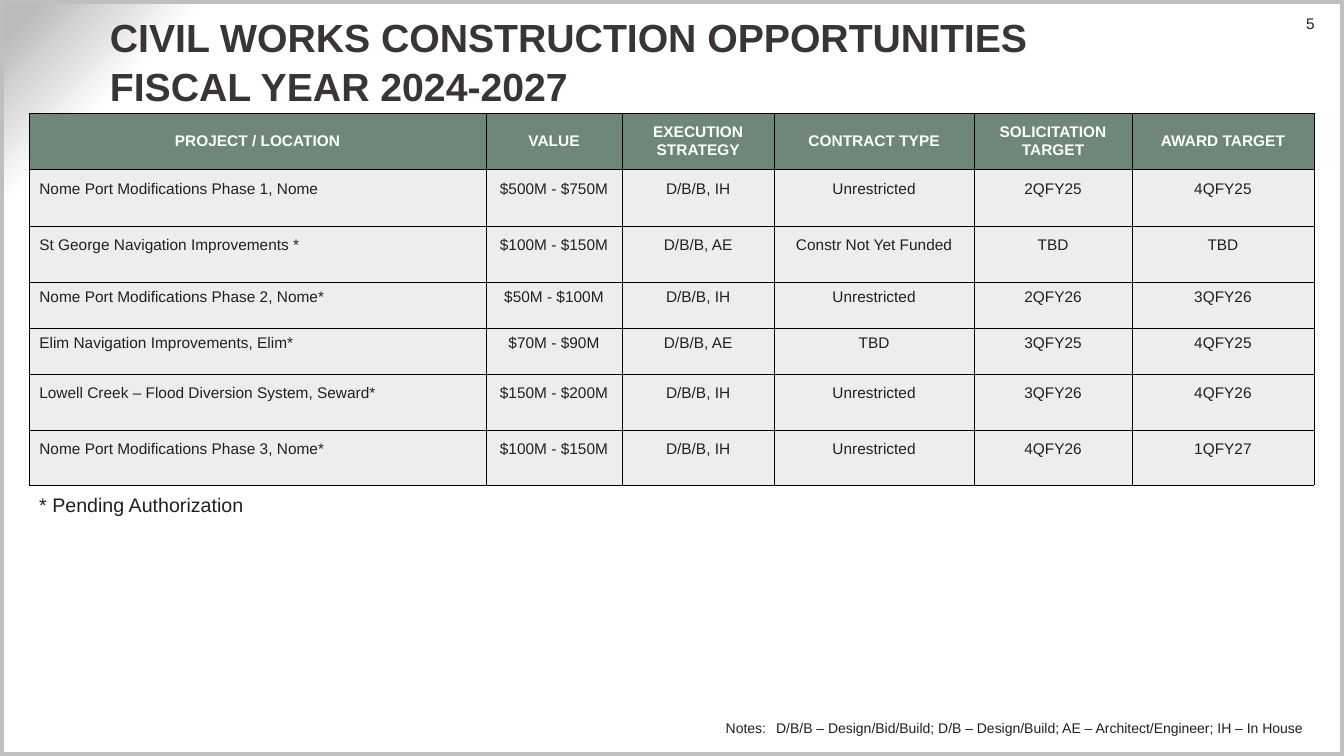
"""Build the civil works construction opportunities slide."""
from pptx import Presentation
from pptx.dml.color import RGBColor
from pptx.enum.shapes import MSO_SHAPE
from pptx.enum.text import MSO_ANCHOR, MSO_AUTO_SIZE, PP_ALIGN
from pptx.oxml import parse_xml
from pptx.oxml.ns import nsdecls
from pptx.util import Inches, Pt

INK = "221F20"
COLUMN_WIDTHS = (4.53, 1.35, 1.51, 1.98, 1.57, 1.8)
ROW_HEIGHTS = (0.56, 0.56, 0.56, 0.46, 0.45, 0.55, 0.55)
PROJECTS = (
    ("PROJECT / LOCATION", "VALUE", "EXECUTION STRATEGY", "CONTRACT TYPE",
     "SOLICITATION TARGET", "AWARD TARGET"),
    ("Nome Port Modifications Phase 1, Nome", "$500M - $750M", "D/B/B, IH",
     "Unrestricted", "2QFY25", "4QFY25"),
    ("St George Navigation Improvements *", "$100M - $150M", "D/B/B, AE",
     "Constr Not Yet Funded", "TBD", "TBD"),
    ("Nome Port Modifications Phase 2, Nome*", "$50M - $100M", "D/B/B, IH",
     "Unrestricted", "2QFY26", "3QFY26"),
    ("Elim Navigation Improvements, Elim*", "$70M - $90M", "D/B/B, AE",
     "TBD", "3QFY25", "4QFY25"),
    ("Lowell Creek – Flood Diversion System, Seward*", "$150M - $200M", "D/B/B, IH",
     "Unrestricted", "3QFY26", "4QFY26"),
    ("Nome Port Modifications Phase 3, Nome*", "$100M - $150M", "D/B/B, IH",
     "Unrestricted", "4QFY26", "1QFY27"),
)


def color(hex_text):
    return RGBColor.from_string(hex_text)


def add_span(para, text, size, ink=INK, bold=False):
    span = para.add_run()
    span.text = text
    span.font.name = "Arial"
    span.font.size = Pt(size)
    span.font.bold = bold
    span.font.color.rgb = color(ink)


def set_margins(target, left, top, right, bottom):
    target.margin_left, target.margin_top = Inches(left), Inches(top)
    target.margin_right, target.margin_bottom = Inches(right), Inches(bottom)


def place(shape, left, top, width, height):
    shape.left, shape.top = Inches(left), Inches(top)
    shape.width, shape.height = Inches(width), Inches(height)


def set_background(page):
    stops = ((0, "FFFFFF"), (87, "FFFFFF"), (90, "FFFFFF"), (98, "BBBBBC"), (100, "BBBBBC"))
    stop_xml = "".join(
        f'<a:gs pos="{place_percent * 1000}"><a:srgbClr val="{shade}"/></a:gs>'
        for place_percent, shade in stops[1:4])
    background = parse_xml(
        f'<p:bg {nsdecls("p", "a")}><p:bgPr><a:gradFill rotWithShape="1">'
        f'<a:gsLst>{stop_xml}</a:gsLst><a:path path="circle">'
        '<a:fillToRect l="100000" t="100000"/></a:path></a:gradFill>'
        '<a:effectLst/></p:bgPr></p:bg>')
    page.element.cSld.insert(0, background)


def add_frame(page, width, height):
    frame = page.shapes.add_shape(MSO_SHAPE.RECTANGLE, 0, 0, width, height)
    frame.shadow.inherit = False
    frame.fill.background()
    frame.line.color.rgb = color("BFBFC2")
    frame.line.width = Pt(6)


def add_title(page, lines):
    title = page.shapes.title
    place(title, 1.04, 0.14, 11.36, 0.91)
    text = title.text_frame
    text.auto_size = MSO_AUTO_SIZE.NONE
    text.word_wrap = True
    text.vertical_anchor = MSO_ANCHOR.MIDDLE
    set_margins(text, 0.05, 0, 0.05, 0)
    para = text.paragraphs[0]
    para.alignment = PP_ALIGN.LEFT
    para.line_spacing = 1.04
    for number, line in enumerate(lines):
        if number:
            para.add_line_break()
        add_span(para, line, 28, "393436", True)


def add_text(page, area, text, size, margins=(0.1, 0.05, 0.1, 0.05),
             alignment=PP_ALIGN.LEFT, tab=None):
    box = page.shapes.add_textbox(*map(Inches, area))
    box.text_frame.word_wrap = True
    set_margins(box.text_frame, *margins)
    para = box.text_frame.paragraphs[0]
    para.alignment = alignment
    if tab:
        para._p.get_or_add_pPr().append(parse_xml(
            f'<a:tabLst {nsdecls("a")}><a:tab pos="{Inches(tab)}" algn="l"/></a:tabLst>'))
    add_span(para, text, size)


def add_borders(cell):
    properties = cell._tc.get_or_add_tcPr()
    for side in ("lnL", "lnR", "lnT", "lnB"):
        properties.append(parse_xml(
            f'<a:{side} {nsdecls("a")} w="{Pt(0.25)}"><a:solidFill>'
            f'<a:srgbClr val="000000"/></a:solidFill></a:{side}>'))


def fill_cell(cell, text, is_header, is_centered):
    add_borders(cell)
    cell.fill.solid()
    cell.fill.fore_color.rgb = color("6E8778" if is_header else "EDEDED")
    cell.vertical_anchor = MSO_ANCHOR.MIDDLE
    set_margins(cell, 0.1, 0.05, 0.1, 0.05 if is_header else 0.22)
    para = cell.text_frame.paragraphs[0]
    para.alignment = PP_ALIGN.CENTER if is_centered else PP_ALIGN.LEFT
    add_span(para, text, 11, "FFFFFF" if is_header else INK, is_header)


def add_projects(page):
    area = (0.29, 1.12, sum(COLUMN_WIDTHS), sum(ROW_HEIGHTS))
    table = page.shapes.add_table(
        len(ROW_HEIGHTS), len(COLUMN_WIDTHS), *map(Inches, area)).table
    for column, width in zip(table.columns, COLUMN_WIDTHS):
        column.width = Inches(width)
    for row, height in zip(table.rows, ROW_HEIGHTS):
        row.height = Inches(height)
    for row_number, values in enumerate(PROJECTS):
        for column_number, value in enumerate(values):
            is_header = row_number == 0
            fill_cell(table.cell(row_number, column_number), value,
                      is_header, is_header or column_number > 0)


def main():
    deck = Presentation()
    deck.slide_width, deck.slide_height = Inches(13.33), Inches(7.5)
    page = deck.slides.add_slide(deck.slide_layouts[5])
    set_background(page)
    add_frame(page, deck.slide_width, deck.slide_height)
    add_text(page, (12.44, 0.14, 0.6, 0.19), "5", 11, (0.1, 0, 0, 0), PP_ALIGN.RIGHT)
    add_title(page, ("CIVIL WORKS CONSTRUCTION OPPORTUNITIES", "FISCAL YEAR 2024-2027"))
    add_projects(page)
    add_text(page, (0.29, 4.84, 4.52, 0.34), "* Pending Authorization", 14)
    add_text(page, (7.1, 7.09, 5.93, 0.27),
             "Notes: \tD/B/B – Design/Bid/Build; D/B – Design/Build; "
             "AE – Architect/Engineer; IH – In House", 10, tab=0.5)
    deck.save("out.pptx")


if __name__ == "__main__":
    main()
